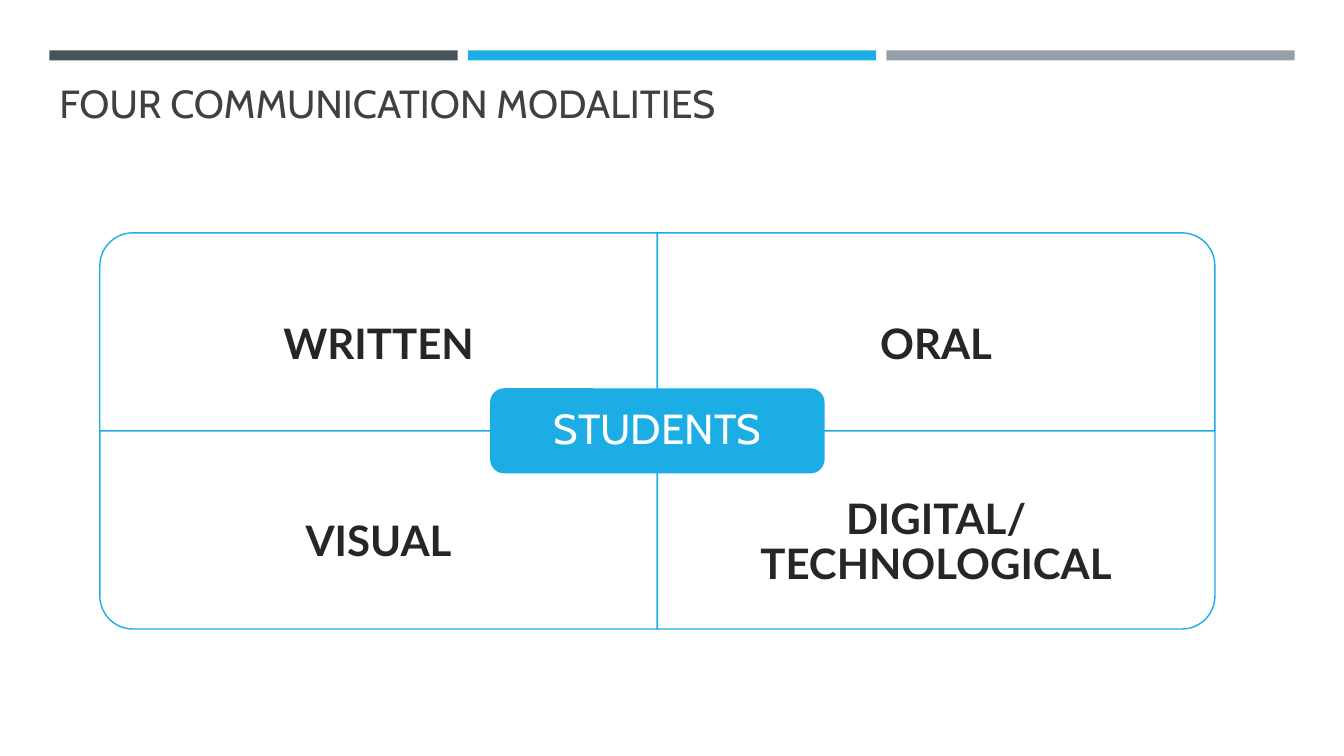
import pptx
import pptx.dml.color
import pptx.enum.shapes
import pptx.enum.text
import pptx.util

RGBColor = pptx.dml.color.RGBColor
MSO_SHAPE = pptx.enum.shapes.MSO_SHAPE
PP_ALIGN = pptx.enum.text.PP_ALIGN
MSO_ANCHOR = pptx.enum.text.MSO_ANCHOR
Inches = pptx.util.Inches
Pt = pptx.util.Pt

SLATE = RGBColor(0x46, 0x53, 0x59)
BLUE = RGBColor(0x1C, 0xAD, 0xE4)
GRAY = RGBColor(0x96, 0x9F, 0xA7)
TITLE_GRAY = RGBColor(0x40, 0x40, 0x40)
INK = RGBColor(0x26, 0x26, 0x26)
WHITE = RGBColor(0xFF, 0xFF, 0xFF)

# Top bars: three columns
BAR_LEFT, BAR_TOP, BAR_W, BAR_H, BAR_STEP = 0.49, 0.5, 4.05, 0.1, 4.15

# Matrix: two columns by two rows
GRID_LEFT, GRID_TOP, COL_W, ROW_H = 0.99, 2.31, 5.53, 1.965
LABEL_H = ROW_H * 0.75

# Label, column, row, rotation that turns the rounded corner outward
QUADRANTS = [
    ("WRITTEN", 0, 0, 270),
    ("ORAL", 1, 0, 0),
    ("VISUAL", 0, 1, 180),
    ("DIGITAL/TECHNOLOGICAL", 1, 1, 90),
]
# Left, top, right and bottom insets of the labels in each row
LABEL_INSETS = [(0.28, 0.87, 0.28, 0.1), (0.23, 0, 0.23, 0.23)]


def write_text(sp, text, size=30, font="Lato", color=INK, bold=False,
               align=PP_ALIGN.CENTER, anchor=MSO_ANCHOR.MIDDLE,
               insets=(0.1, 0.05, 0.1, 0.05), spacing=0.9):
    tf = sp.text_frame
    tf.word_wrap = True
    tf.vertical_anchor = anchor
    tf.margin_left, tf.margin_top, tf.margin_right, tf.margin_bottom = map(Inches, insets)
    p = tf.paragraphs[0]
    p.alignment = align
    p.line_spacing = spacing
    r = p.add_run()
    r.text = text
    r.font.size = Pt(size)
    r.font.name = font
    r.font.bold = bold
    r.font.color.rgb = color


def add_box(slide, kind, left, top, width, height, fill, line=None, rotation=0):
    """Add a shape that covers the given area once it is rotated."""
    w, h = (height, width) if rotation % 180 else (width, height)
    sp = slide.shapes.add_shape(
        kind, Inches(left + (width - w) / 2), Inches(top + (height - h) / 2),
        Inches(w), Inches(h))
    sp.rotation = rotation
    sp.shadow.inherit = False
    sp.fill.solid()
    sp.fill.fore_color.rgb = fill
    if line is None:
        sp.line.fill.background()
    else:
        sp.line.color.rgb = line
        sp.line.width = Pt(1)
    return sp


def add_label(slide, text, left, top, width, height, **fmt):
    sp = slide.shapes.add_textbox(Inches(left), Inches(top), Inches(width), Inches(height))
    write_text(sp, text, **fmt)


def add_quadrant(slide, text, col, row, rotation):
    left, top = GRID_LEFT + col * COL_W, GRID_TOP + row * ROW_H
    add_box(slide, MSO_SHAPE.ROUND_1_RECTANGLE, left, top, COL_W, ROW_H,
            WHITE, line=BLUE, rotation=rotation)
    # Labels keep to the outer three quarters of the row
    label_top = top + row * (ROW_H - LABEL_H)
    add_label(slide, text, left, label_top, COL_W, LABEL_H,
              bold=True, insets=LABEL_INSETS[row])


def add_hub(slide, text):
    w, h = COL_W * 0.6, ROW_H * 0.43
    sp = add_box(slide, MSO_SHAPE.ROUNDED_RECTANGLE,
                 GRID_LEFT + COL_W - w / 2, GRID_TOP + ROW_H - h / 2, w, h, BLUE)
    write_text(sp, text, font="Cabin", color=WHITE, insets=(0.12,) * 4)


def main():
    prs = pptx.Presentation()
    prs.slide_width, prs.slide_height = Inches(13.33), Inches(7.5)
    slide = prs.slides.add_slide(prs.slide_layouts[6])

    # Header
    for i, color in enumerate((SLATE, BLUE, GRAY)):
        add_box(slide, MSO_SHAPE.RECTANGLE, BAR_LEFT + i * BAR_STEP, BAR_TOP,
                BAR_W, BAR_H, color)
    add_label(slide, "FOUR COMMUNICATION MODALITIES", BAR_LEFT, 0, 12.06, 1.3,
              size=28, font="Cabin", color=TITLE_GRAY, align=PP_ALIGN.LEFT,
              anchor=MSO_ANCHOR.BOTTOM, spacing=1.0)

    # Matrix with its centre
    for quadrant in QUADRANTS:
        add_quadrant(slide, *quadrant)
    add_hub(slide, "STUDENTS")

    prs.save("out.pptx")


if __name__ == "__main__":
    main()
